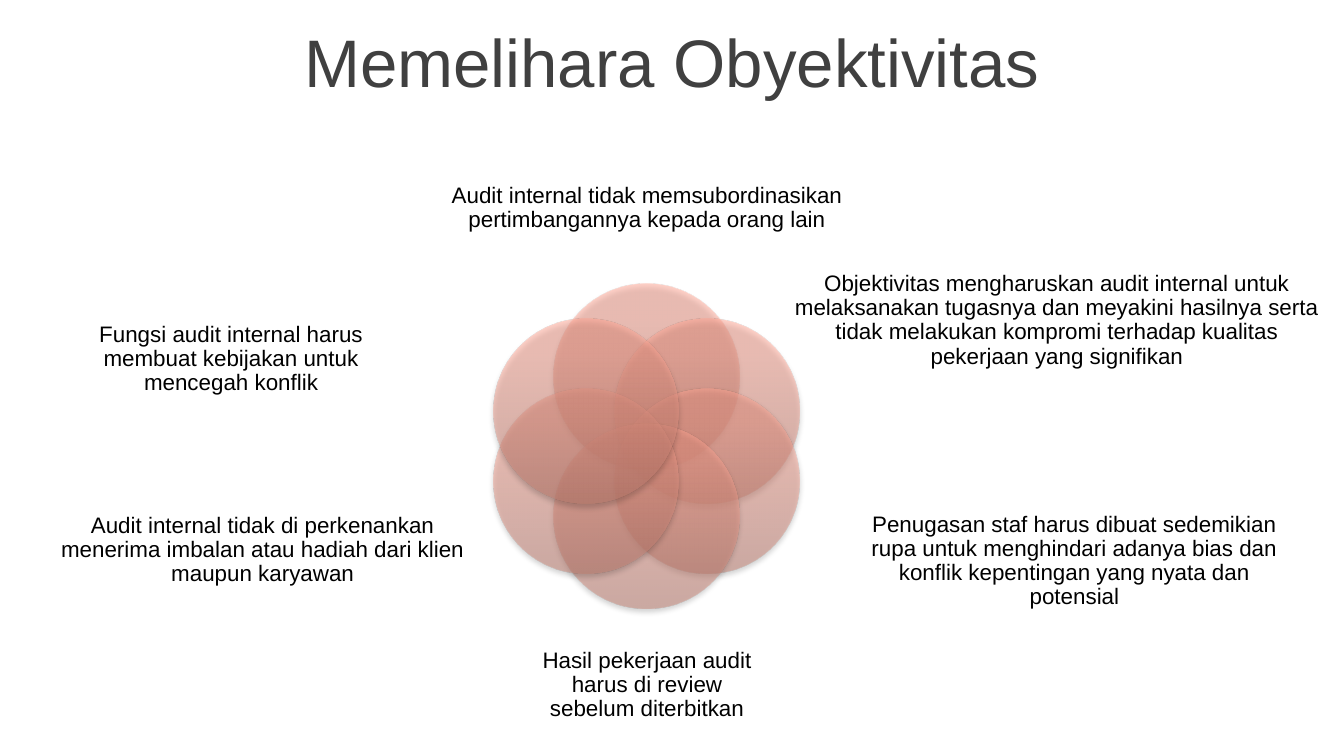
from math import cos, radians, sin

from pptx import Presentation
from pptx.dml.color import RGBColor
from pptx.enum.shapes import MSO_SHAPE
from pptx.enum.text import MSO_ANCHOR, PP_ALIGN
from pptx.oxml import parse_xml
from pptx.oxml.ns import nsdecls
from pptx.util import Inches, Pt

OVAL = MSO_SHAPE.OVAL
MIDDLE = MSO_ANCHOR.MIDDLE
CENTER = PP_ALIGN.CENTER

SLIDE_WIDTH = 10
SLIDE_HEIGHT = SLIDE_WIDTH * 9 / 16

CENTER_X, CENTER_Y = 4.81, 3.32
RING_RADIUS = 0.52
PETAL_SIZE = 1.38
PETAL_STOPS = [(0, "C37F70"), (80, "FDA492"), (100, "FFA491")]

# Clockwise from the top: text, left, top, width, height
PRINCIPLES = [
    ("Audit internal tidak memsubordinasikan pertimbangannya kepada orang lain",
     3.32, 1.08, 2.99, 0.94),
    ("Objektivitas mengharuskan audit internal untuk melaksanakan tugasnya dan "
     "meyakini hasilnya serta tidak melakukan kompromi terhadap kualitas "
     "pekerjaan yang signifikan",
     5.88, 1.87, 3.97, 1.03),
    ("Penugasan staf harus dibuat sedemikian rupa untuk menghindari adanya bias "
     "dan konflik kepentingan yang nyata dan potensial",
     6.41, 3.6, 3.17, 1.15),
    ("Hasil pekerjaan audit harus di review sebelum diterbitkan",
     3.95, 4.63, 1.73, 0.94),
    ("Audit internal tidak di perkenankan menerima imbalan atau hadiah dari "
     "klien maupun karyawan",
     0.35, 3.52, 3.21, 1.15),
    ("Fungsi audit internal harus membuat kebijakan untuk mencegah konflik",
     0.38, 2.1, 2.68, 1.15),
]


def rgb(value):
    return RGBColor.from_string(value)


class SlideBuilder:
    font = "Arial"

    def __init__(self, slide):
        self.slide = slide

    def text(self, content, left, top, width, height, size=12,
             color="000000", line_spacing=0.9):
        box = self.slide.shapes.add_textbox(
            Inches(left), Inches(top), Inches(width), Inches(height))
        frame = box.text_frame
        frame.word_wrap = True
        frame.vertical_anchor = MIDDLE
        frame.margin_left = frame.margin_right = 0
        frame.margin_top = frame.margin_bottom = 0
        paragraph = frame.paragraphs[0]
        paragraph.alignment = CENTER
        paragraph.line_spacing = line_spacing
        run = paragraph.add_run()
        run.text = content
        run.font.name = self.font
        run.font.size = Pt(size)
        run.font.color.rgb = rgb(color)

    def petal(self, center_x, center_y):
        """Add a half-transparent circle with a soft shadow."""
        circle = self.slide.shapes.add_shape(
            OVAL, Inches(center_x - PETAL_SIZE / 2),
            Inches(center_y - PETAL_SIZE / 2),
            Inches(PETAL_SIZE), Inches(PETAL_SIZE))
        stops = "".join(
            f'<a:gs pos="{position * 1000}"><a:srgbClr val="{color}">'
            '<a:alpha val="50000"/></a:srgbClr></a:gs>'
            for position, color in PETAL_STOPS)
        properties = circle._element.spPr
        properties.append(parse_xml(
            f'<a:gradFill {nsdecls("a")} rotWithShape="1"><a:gsLst>{stops}</a:gsLst>'
            '<a:lin ang="16200000" scaled="0"/></a:gradFill>'))
        circle.line.fill.background()
        properties.append(parse_xml(
            f'<a:effectLst {nsdecls("a")}><a:outerShdw blurRad="{Pt(3.1)}" '
            f'dist="{Pt(1.8)}" dir="5400000" rotWithShape="0">'
            '<a:srgbClr val="000000"><a:alpha val="35000"/></a:srgbClr>'
            '</a:outerShdw></a:effectLst>'))


def main():
    deck = Presentation()
    deck.slide_width = Inches(SLIDE_WIDTH)
    deck.slide_height = Inches(SLIDE_HEIGHT)
    builder = SlideBuilder(deck.slides.add_slide(deck.slide_layouts[6]))

    builder.text("Memelihara Obyektivitas", 0, 0.14, SLIDE_WIDTH, 0.63,
                 size=36, color="404040", line_spacing=1)
    for index, principle in enumerate(PRINCIPLES):
        angle = radians(index * 360 / len(PRINCIPLES))
        builder.petal(CENTER_X + RING_RADIUS * sin(angle),
                      CENTER_Y - RING_RADIUS * cos(angle))
        builder.text(*principle)

    deck.save("out.pptx")


if __name__ == "__main__":
    main()
